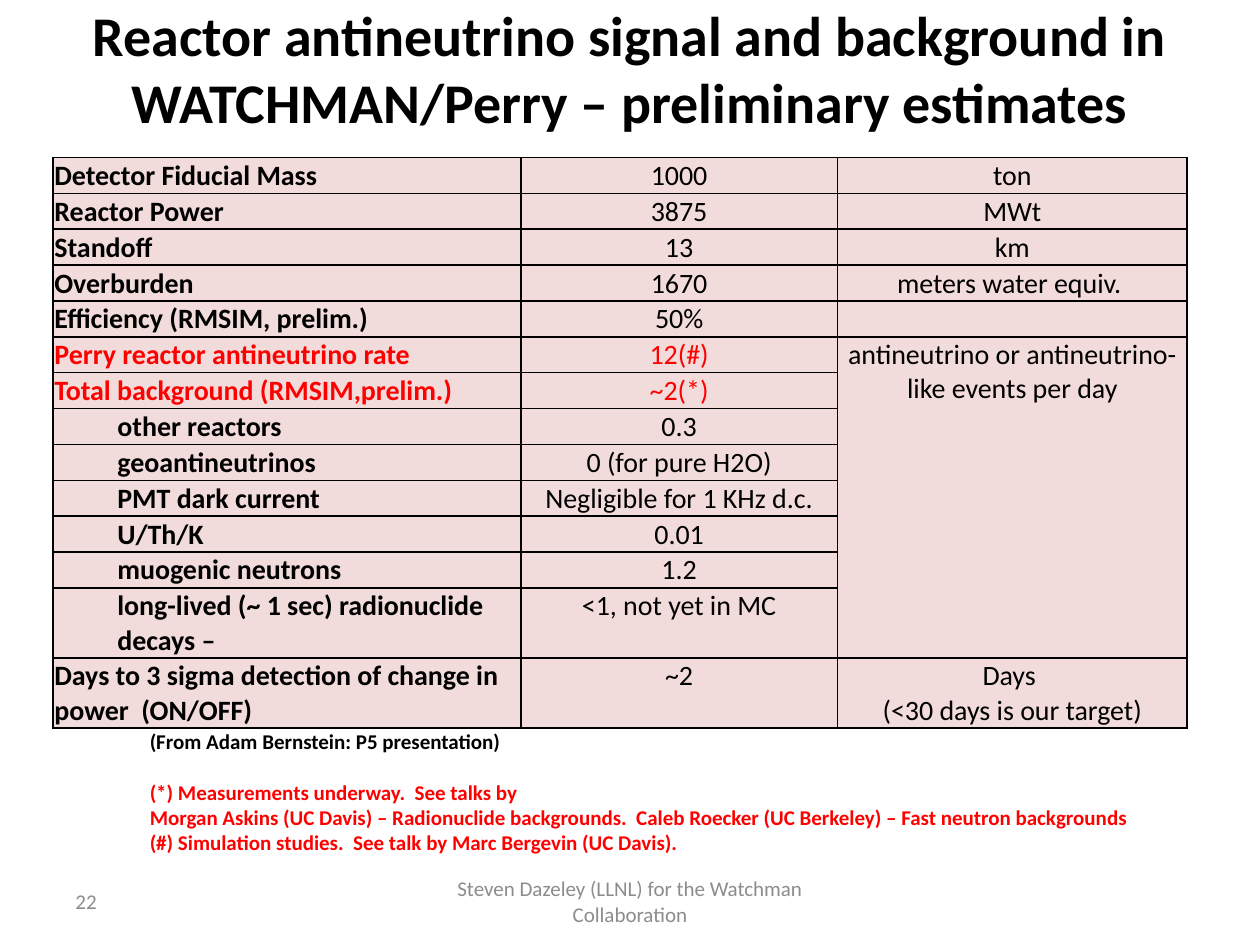
from lxml.etree import SubElement
from pptx import Presentation
from pptx.dml.color import RGBColor
from pptx.enum.text import MSO_ANCHOR as Anchor, PP_ALIGN as Align
from pptx.oxml.ns import qn
from pptx.util import Pt

"""Build the reactor antineutrino signal and background slide."""

BLACK, RED, GREY, PINK = "000000", "FF0000", "8C8C8C", "F2DCDB"


def style(para, size, color, bold=False, align=Align.LEFT):
    para.alignment = align
    for span in para.runs:
        span.font.name = "Calibri"
        span.font.size = Pt(size)
        span.font.bold = bold
        span.font.color.rgb = RGBColor.from_string(color)


def add_text(left, top, width, height, text, anchor=Anchor.MIDDLE, wrap=True):
    box = page.shapes.add_textbox(Pt(left), Pt(top), Pt(width), Pt(height))
    frame = box.text_frame
    frame.text = text
    frame.word_wrap = wrap
    frame.vertical_anchor = anchor
    return frame.paragraphs


deck = Presentation()
deck.slide_width, deck.slide_height = Pt(720), Pt(540)
page = deck.slides.add_slide(deck.slide_layouts[6])

title = add_text(36, -10.8, 648, 98.6, "Reactor antineutrino signal and background in "
                 "WATCHMAN/Perry – preliminary estimates")
style(title[0], 32, BLACK, True, Align.CENTER)

rows = [
    ("Detector Fiducial Mass", "1000", "ton"),
    ("Reactor Power", "3875", "MWt"),
    ("Standoff", "13", "km"),
    ("Overburden", "1670", "meters water equiv. "),
    ("Efficiency (RMSIM, prelim.)", "50%", ""),
    ("Perry reactor antineutrino rate", "12(#)",
     "antineutrino or antineutrino-like events per day"),
    ("Total background (RMSIM,prelim.)", "~2(*)", ""),
    ("other reactors", "0.3", ""),
    ("geoantineutrinos", "0 (for pure H2O)", ""),
    ("PMT dark current", "Negligible for 1 KHz d.c.", ""),
    ("U/Th/K", "0.01", ""),
    ("muogenic neutrons", "1.2", ""),
    ("long-lived (~ 1 sec) radionuclide decays –", "<1, not yet in MC", ""),
    ("Days to 3 sigma detection of change in power  (ON/OFF)", "~2",
     "Days \n(<30 days is our target)"),
]
red_rows, indented_rows, tall_rows = (5, 6), range(7, 13), (12, 13)

table = page.shapes.add_table(len(rows), 3, Pt(30.4), Pt(90), Pt(648), Pt(327)).table
for column, width in zip(table.columns, (267.2, 181, 199.8)):
    column.width = Pt(width)

for r, texts in enumerate(rows):
    table.rows[r].height = Pt(40 if r in tall_rows else 20.5)
    for c, text in enumerate(texts):
        cell = table.cell(r, c)
        cell.margin_left = cell.margin_right = cell.margin_top = Pt(0.72)
        cell.margin_bottom = Pt(0)
        cell.text_frame.text = text
        for para in cell.text_frame.paragraphs:
            style(para, 16, RED if r in red_rows and c < 2 else BLACK,
                  c == 0, Align.CENTER if c else Align.LEFT)
            if c == 0 and r in indented_rows:
                para._p.get_or_add_pPr().set("marL", str(Pt(36)))
            if not text:
                SubElement(para._p, qn("a:endParaRPr"), sz="1600")
        props = cell._tc.get_or_add_tcPr()
        for side in ("a:lnL", "a:lnR", "a:lnT", "a:lnB"):
            line = SubElement(props, qn(side), w=str(Pt(1)))
            SubElement(SubElement(line, qn("a:solidFill")), qn("a:srgbClr"), val=BLACK)
        cell.fill.solid()
        cell.fill.fore_color.rgb = RGBColor.from_string(PINK)
        fill = props.find(qn("a:solidFill"))
        props.append(fill)
table.cell(5, 2).merge(table.cell(12, 2))

notes = add_text(78.5, 412.6, 581.8, 79.9, "\n".join([
    "(From Adam Bernstein: P5 presentation)",
    "(*) Measurements underway.  See talks by",
    "Morgan Askins (UC Davis) – Radionuclide backgrounds.  "
    "Caleb Roecker (UC Berkeley) – Fast neutron backgrounds",
    "(#) Simulation studies.  See talk by Marc Bergevin (UC Davis).",
]), Anchor.TOP, False)
for i, para in enumerate(notes):
    style(para, 12, RED if i else BLACK, True)
notes[1].space_before = Pt(14.6)

number = add_text(36, 500.5, 168, 28.8, "22")
style(number[0], 12, GREY)
footer = add_text(246, 500.5, 228, 28.8,
                  "Steven Dazeley (LLNL) for the Watchman Collaboration")
style(footer[0], 12, GREY, align=Align.CENTER)

deck.save("out.pptx")
